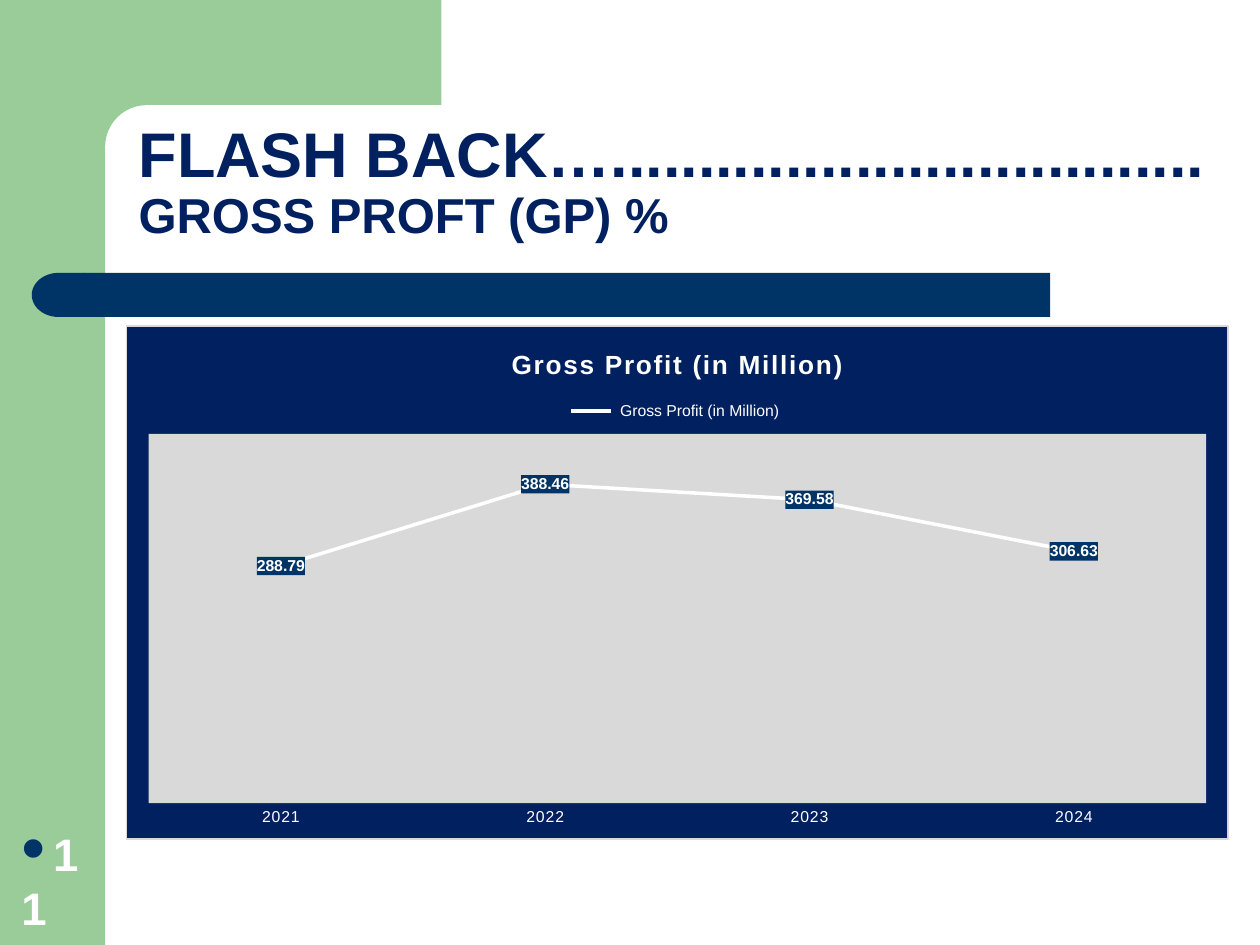
from pptx import Presentation, oxml
from pptx.chart.data import CategoryChartData
from pptx.dml.color import RGBColor
from pptx.enum import chart as chart_enum, shapes, text
from pptx.oxml import ns
from pptx.util import Cm, Pt

COLORS = {"green": "99CC99", "white": "FFFFFF", "bar": "003366",
          "navy": "002060", "gray": "D9D9D9"}
FONT = "Arial"
SERIES_NAME = " Gross Profit (in Million) "
PROFITS = {"2021": 288.79, "2022": 388.46, "2023": 369.58, "2024": 306.63}


def color(name):
    return RGBColor.from_string(COLORS[name])


def style_font(font, size, color_name, bold=False):
    font.name = FONT
    font.size = Pt(size)
    font.bold = bold
    font.color.rgb = color(color_name)


def add_run(paragraph, content, size, color_name):
    run = paragraph.add_run()
    run.text = content
    style_font(run.font, size, color_name, bold=True)
    return run


def add_panel(slide, kind, box, color_name, adjustment=None):
    shape = slide.shapes.add_shape(kind, *map(Cm, box))
    shape.shadow.inherit = False
    shape.fill.solid()
    shape.fill.fore_color.rgb = color(color_name)
    shape.line.fill.background()
    if adjustment is not None:
        shape.adjustments[0] = adjustment
    return shape


def add_background(slide):
    kinds = shapes.MSO_SHAPE
    add_panel(slide, kinds.RECTANGLE, (0, 0, 2.12, 19.05), "green")
    add_panel(slide, kinds.RECTANGLE, (1.9, 0, 7, 2.96), "green")
    add_panel(slide, kinds.ROUNDED_RECTANGLE, (2.12, 2.12, 14.18, 1.69), "white", 0.5)
    add_panel(slide, kinds.ROUNDED_RECTANGLE, (1.7, 5.5, 19.47, 0.89), "bar", 0)
    cap = add_panel(slide, kinds.FLOWCHART_DELAY, (0.64, 5.5, 1.08, 0.89), "bar")
    cap.rotation = 180


def place_title(slide):
    title = slide.shapes.title
    title.left, title.top, title.width, title.height = map(Cm, (2.54, 2.12, 22.23, 3.18))
    title.element.getparent().append(title.element)
    frame = title.text_frame
    frame.word_wrap = True
    frame.auto_size = text.MSO_AUTO_SIZE.NONE
    frame.vertical_anchor = text.MSO_ANCHOR.MIDDLE
    paragraph = frame.paragraphs[0]
    paragraph.alignment = text.PP_ALIGN.LEFT
    paragraph.line_spacing = 0.9
    add_run(paragraph, "FLASH BACK….................................. ", 36, "navy")
    add_run(paragraph, "GROSS PROFT (GP) %", 28, "navy")


def add_page_number(slide):
    frame = slide.shapes.add_textbox(*map(Cm, (0.23, 17.63, 1.63, 1.34))).text_frame
    frame.word_wrap = True
    frame.auto_size = text.MSO_AUTO_SIZE.SHAPE_TO_FIT_TEXT
    frame.vertical_anchor = text.MSO_ANCHOR.BOTTOM
    frame.margin_left = Cm(0.2)
    paragraph = frame.paragraphs[0]
    add_run(paragraph, "11", 26, "white")
    properties = paragraph._p.get_or_add_pPr()
    for markup in (f'<a:buClr {ns.nsdecls("a")}><a:srgbClr val="{COLORS["bar"]}"/></a:buClr>',
                   f'<a:buSzPct {ns.nsdecls("a")} val="70000"/>',
                   f'<a:buFont {ns.nsdecls("a")} typeface="Wingdings"/>',
                   f'<a:buChar {ns.nsdecls("a")} char="l"/>'):
        properties.append(oxml.parse_xml(markup))


def chart_fill(fill_name, border_name=None):
    border = "<a:noFill/>"
    if border_name:
        border = f'<a:solidFill><a:srgbClr val="{COLORS[border_name]}"/></a:solidFill>'
    return oxml.parse_xml(
        f'<c:spPr {ns.nsdecls("c", "a")}><a:solidFill><a:srgbClr val="{COLORS[fill_name]}"/>'
        f'</a:solidFill><a:ln w="9525">{border}</a:ln></c:spPr>')


def place_plot(plot_area, x, y, width, height):
    for layout in plot_area.findall(ns.qn("c:layout")):
        plot_area.remove(layout)
    plot_area.insert(0, oxml.parse_xml(
        f'<c:layout {ns.nsdecls("c")}><c:manualLayout><c:layoutTarget val="inner"/>'
        f'<c:xMode val="edge"/><c:yMode val="edge"/><c:x val="{x}"/><c:y val="{y}"/>'
        f'<c:w val="{width}"/><c:h val="{height}"/></c:manualLayout></c:layout>'))


def style_axes(chart):
    category_axis = chart.category_axis
    category_axis.major_tick_mark = chart_enum.XL_TICK_MARK.NONE
    category_axis.format.line.fill.background()
    style_font(category_axis.tick_labels.font, 9, "white")
    category_axis.tick_labels.font._element.set("spc", "50")
    value_axis = chart.value_axis
    value_axis.minimum_scale, value_axis.maximum_scale = 0, 450
    value_axis.has_major_gridlines = False
    value_axis.visible = False


def style_series(series):
    series.smooth = False
    series.marker.style = chart_enum.XL_MARKER_STYLE.NONE
    series.format.line.color.rgb = color("white")
    series.format.line.width = Pt(2)
    labels = series.data_labels
    labels.show_value = True
    labels.number_format = "0.00"
    labels.number_format_is_linked = False
    labels.position = chart_enum.XL_LABEL_POSITION.CENTER
    style_font(labels.font, 9, "white", bold=True)
    labels._element.find(ns.qn("c:txPr")).addprevious(chart_fill("bar"))


def add_profit_chart(slide):
    data = CategoryChartData(number_format="0.00")
    data.categories = list(PROFITS)
    data.add_series(SERIES_NAME, list(PROFITS.values()))
    chart = slide.shapes.add_chart(chart_enum.XL_CHART_TYPE.LINE,
                                   *map(Cm, (2.54, 6.56, 22.23, 10.37)), data).chart
    style_font(chart.font, 10, "bar")
    chart.has_title = True
    title_run = add_run(chart.chart_title.text_frame.paragraphs[0], SERIES_NAME, 15, "white")
    title_run.font._element.set("spc", "100")
    chart.has_legend = True
    chart.legend.position = chart_enum.XL_LEGEND_POSITION.TOP
    chart.legend.include_in_layout = False
    style_font(chart.legend.font, 9, "white")
    style_axes(chart)
    chart.plots[0].vary_by_categories = False
    style_series(chart.plots[0].series[0])
    chart_element = chart.element.find(ns.qn("c:chart"))
    chart_element.addnext(chart_fill("navy", "gray"))
    plot_area = chart_element.find(ns.qn("c:plotArea"))
    place_plot(plot_area, 0.02, 0.21, 0.96, 0.72)
    plot_area.append(chart_fill("gray"))


def main():
    presentation = Presentation()
    presentation.slide_width, presentation.slide_height = Cm(25.4), Cm(19.05)
    slide = presentation.slides.add_slide(presentation.slide_layouts[5])
    add_background(slide)
    place_title(slide)
    add_page_number(slide)
    add_profit_chart(slide)
    presentation.save("out.pptx")


if __name__ == "__main__":
    main()
